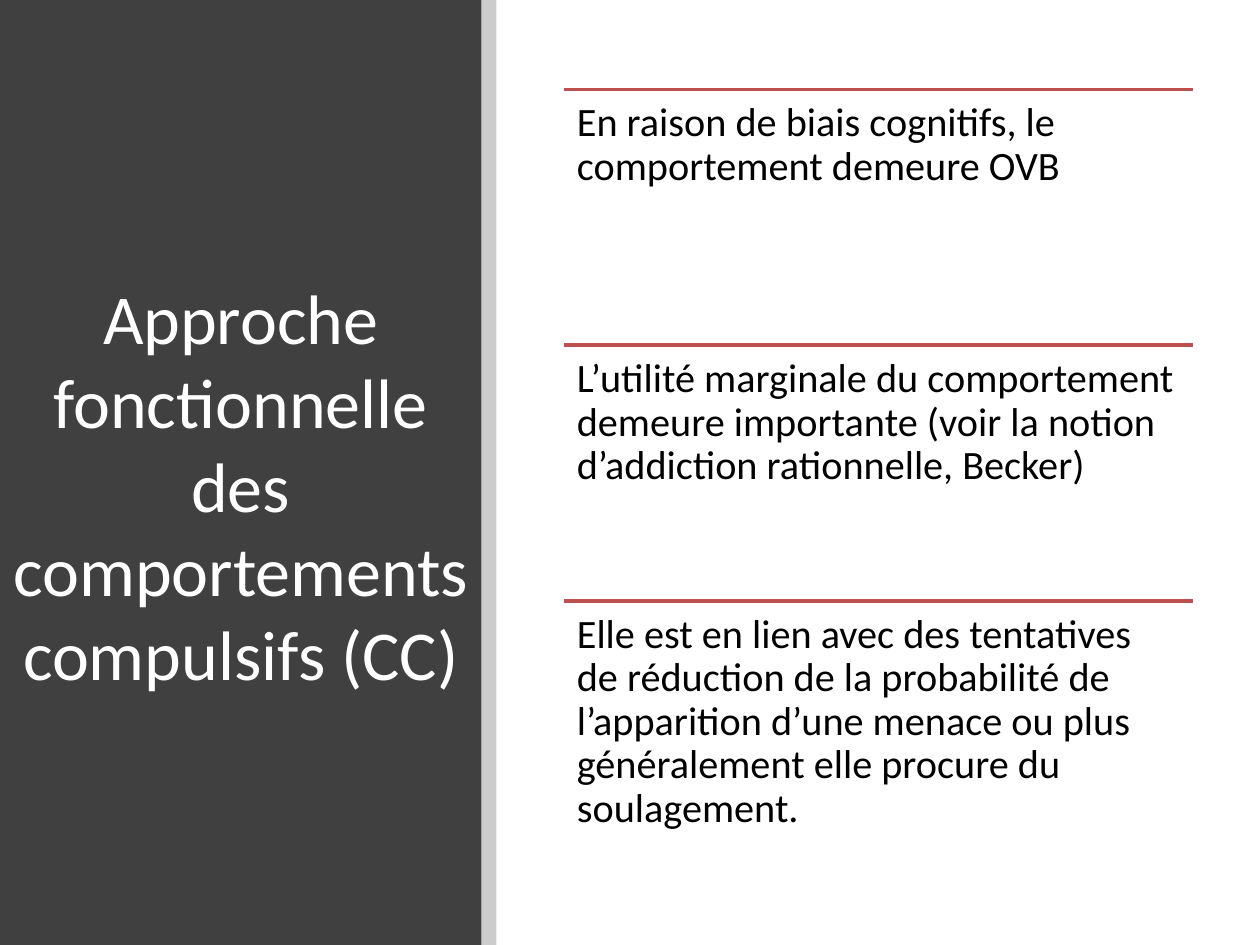
"""Builds the slide on the functional approach to compulsive behaviours."""
from lxml import etree
from pptx import Presentation
from pptx.dml.color import RGBColor
from pptx.enum.shapes import MSO_CONNECTOR, MSO_SHAPE
from pptx.enum.text import MSO_ANCHOR, MSO_AUTO_SIZE, PP_ALIGN
from pptx.oxml.ns import qn
from pptx.util import Inches, Pt

RECTANGLE = MSO_SHAPE.RECTANGLE
STRAIGHT = MSO_CONNECTOR.STRAIGHT
TOP, MIDDLE = MSO_ANCHOR.TOP, MSO_ANCHOR.MIDDLE
LEFT, CENTER = PP_ALIGN.LEFT, PP_ALIGN.CENTER
NO_AUTOFIT = MSO_AUTO_SIZE.NONE
TITLE_ONLY = 5

SLIDE_WIDTH, SLIDE_HEIGHT = 10, 7.5
PANEL_WIDTH, STRIP_WIDTH = 3.82, 0.12
LIST_LEFT, LIST_TOP, LIST_WIDTH, ROW_HEIGHT = 4.48, 0.71, 4.99, 2.03

TITLE = "Approche fonctionnelle des comportements compulsifs (CC)"
ARGUMENTS = [
    "En raison de biais cognitifs, le comportement demeure OVB",
    "L’utilité marginale du comportement demeure importante "
    "(voir la notion d’addiction rationnelle, Becker)",
    "Elle est en lien avec des tentatives de réduction de la probabilité de "
    "l’apparition d’une menace ou plus généralement elle procure du soulagement.",
]


def color(value):
    return RGBColor.from_string(value)


def set_all(target, values):
    for name, value in values.items():
        setattr(target, name, value)


class SlideBuilder:
    font = "Calibri"
    dark, black, white, accent = "404040", "000000", "FFFFFF", "C0504D"
    title_size, body_size, rule_width = 40, 23, 2

    def __init__(self, page):
        self.page = page

    def band(self, left, width, fill, opacity=100):
        shape = self.page.shapes.add_shape(
            RECTANGLE, Inches(left), 0, Inches(width), Inches(SLIDE_HEIGHT))
        shape.shadow.inherit = False
        shape.line.fill.background()
        shape.fill.solid()
        shape.fill.fore_color.rgb = color(fill)
        if opacity < 100:
            tint = shape.element.spPr.find(f"{qn('a:solidFill')}/{qn('a:srgbClr')}")
            etree.SubElement(tint, qn("a:alpha"), val=str(opacity * 1000))

    def fill_text(self, box, text, size, ink, anchor, para_format):
        frame = box.text_frame
        frame.text = text
        set_all(frame, {"word_wrap": True, "auto_size": NO_AUTOFIT,
                        "vertical_anchor": anchor})
        for side in ("left", "top", "right", "bottom"):
            setattr(frame, f"margin_{side}", Inches(0.1))
        para = frame.paragraphs[0]
        set_all(para, para_format)
        span = para.runs[0]
        set_all(span.font, {"name": self.font, "size": Pt(size)})
        span.font.color.rgb = color(ink)

    def title(self, text, left, top, width, height):
        box = self.page.shapes.title
        set_all(box, {"left": Inches(left), "top": Inches(top),
                      "width": Inches(width), "height": Inches(height)})
        self.fill_text(box, text, self.title_size, self.white, MIDDLE,
                       {"alignment": CENTER})
        box.element.getparent().append(box.element)

    def rule(self, left, top, width):
        line = self.page.shapes.add_connector(
            STRAIGHT, Inches(left), Inches(top), Inches(left + width), Inches(top))
        line.line.width = Pt(self.rule_width)
        line.line.color.rgb = color(self.accent)
        etree.SubElement(line.element.spPr, qn("a:effectLst"))

    def argument(self, text, left, top, width, height):
        self.rule(left, top, width)
        box = self.page.shapes.add_textbox(
            Inches(left), Inches(top), Inches(width), Inches(height))
        self.fill_text(box, text, self.body_size, self.black, TOP,
                       {"alignment": LEFT, "line_spacing": 0.9})


def main():
    deck = Presentation()
    set_all(deck, {"slide_width": Inches(SLIDE_WIDTH),
                   "slide_height": Inches(SLIDE_HEIGHT)})
    builder = SlideBuilder(deck.slides.add_slide(deck.slide_layouts[TITLE_ONLY]))
    builder.band(0, PANEL_WIDTH, builder.dark)
    builder.band(PANEL_WIDTH, STRIP_WIDTH, builder.black, opacity=20)
    builder.title(TITLE, 0, 0.89, PANEL_WIDTH, 5.91)
    for row, text in enumerate(ARGUMENTS):
        builder.argument(text, LIST_LEFT, LIST_TOP + row * ROW_HEIGHT,
                         LIST_WIDTH, ROW_HEIGHT)
    deck.save("out.pptx")


if __name__ == "__main__":
    main()
